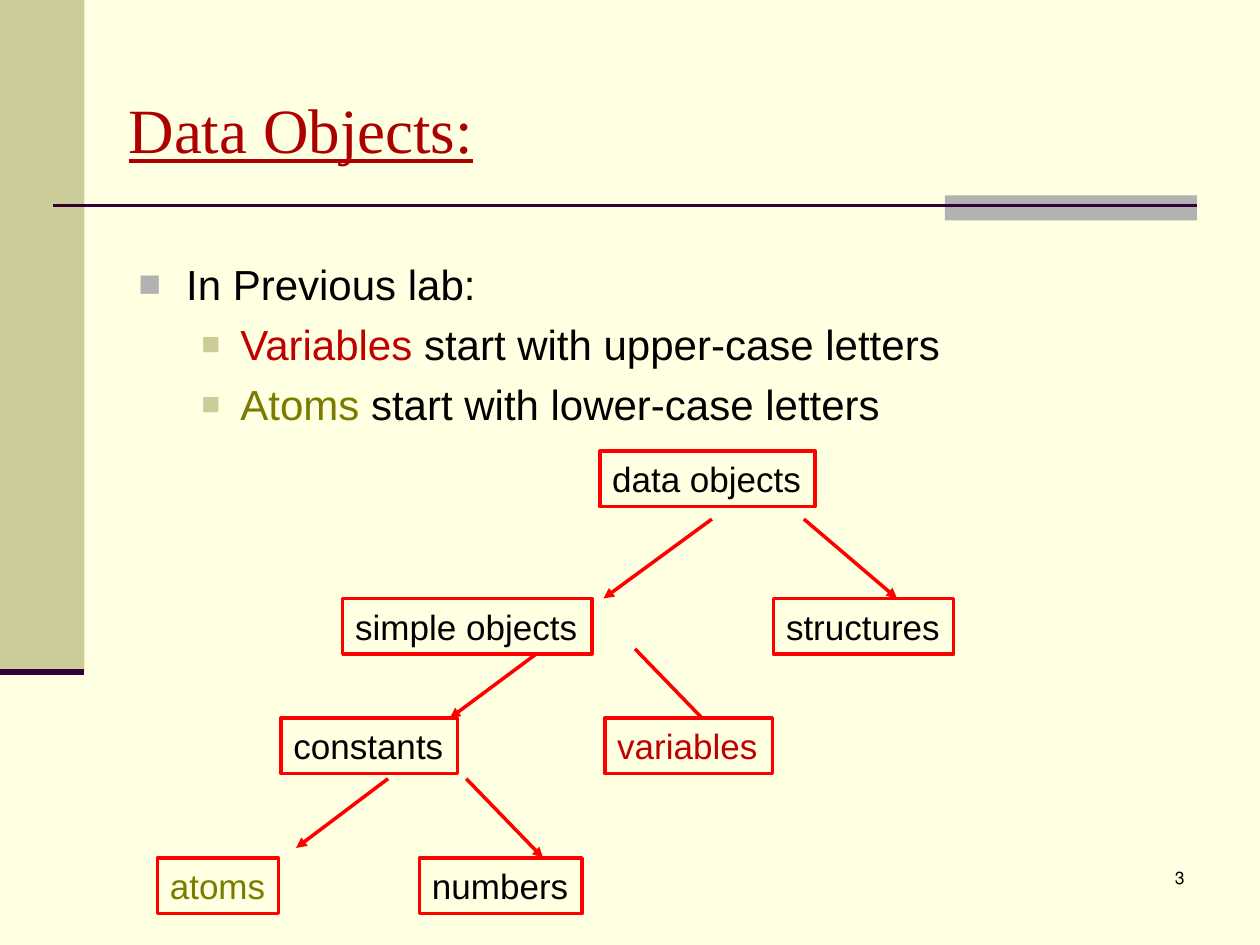
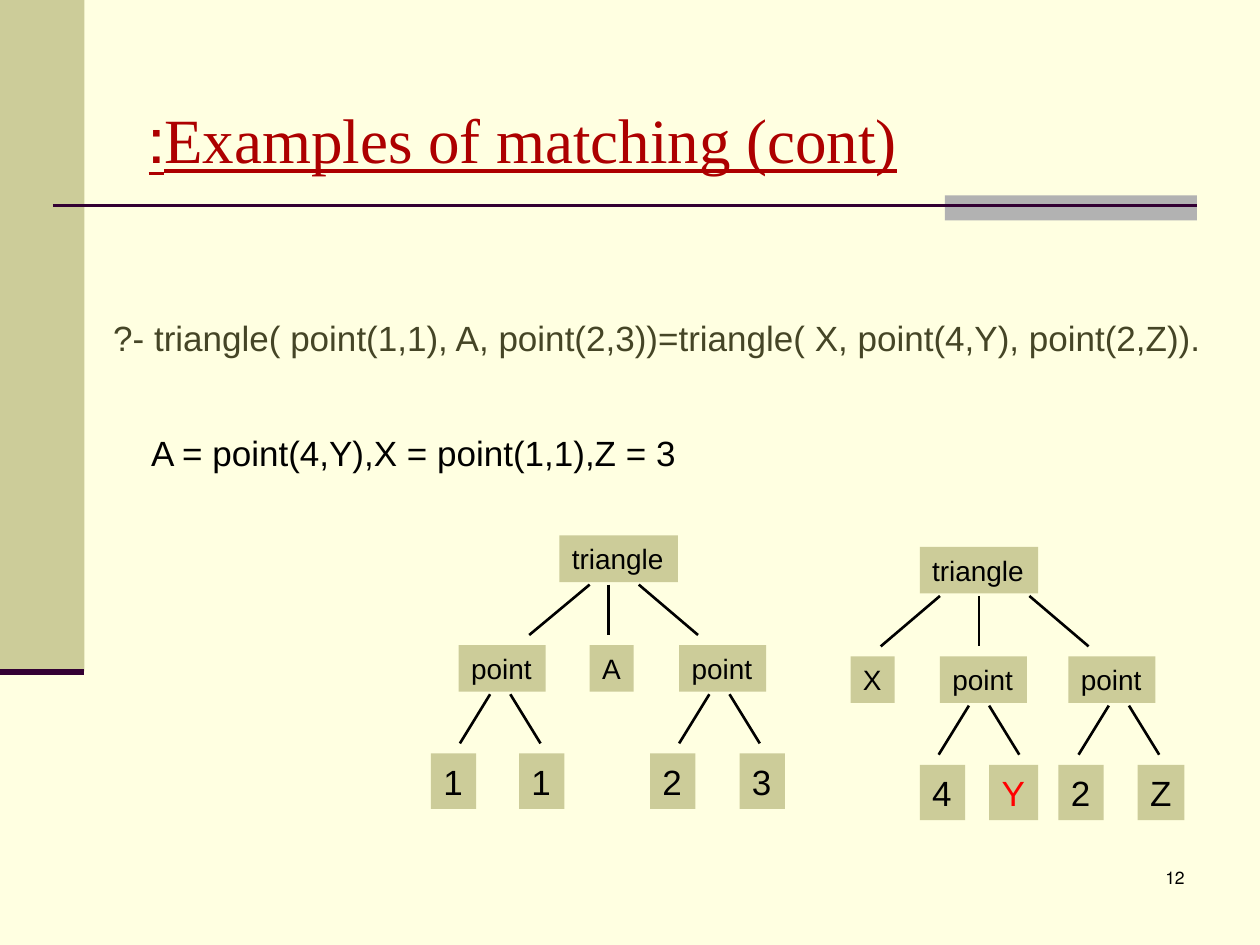
from dataclasses import dataclass

from lxml.etree import SubElement
from pptx import Presentation
from pptx.dml.color import RGBColor
from pptx.enum.shapes import MSO_CONNECTOR, MSO_SHAPE
from pptx.enum.text import MSO_ANCHOR, MSO_AUTO_SIZE, PP_ALIGN
from pptx.oxml.ns import qn
from pptx.util import Inches, Pt


@dataclass(frozen=True)
class Theme:
    paper: str = "FFFFE1"
    sand: str = "CCCC99"
    gray: str = "B2B2B2"
    plum: str = "330033"
    title: str = "AD0000"
    ink: str = "000000"
    red: str = "FF0000"
    brick: str = "C00000"
    olive: str = "7B7B00"
    query: str = "454526"
    serif: str = "Times New Roman"
    sans: str = "Arial"
    head: float = 36
    body: float = 24
    text: float = 20
    node: float = 16
    foot: float = 10


T = Theme()
rgb = RGBColor.from_string


def write(frame, text, size=T.text, color=T.ink, font=T.sans, line=None,
          align=PP_ALIGN.LEFT, rtl=False, under=None, before=0,
          left=0, hang=0, level=0, bullet=None):
    """Add a paragraph; text is a string or a list of (string, colour) runs.

    A bullet is given as (colour, percent of the text size).
    """
    para = frame.paragraphs[0]
    if para.runs:
        para = frame.add_paragraph()
    para.alignment, para.level = align, level
    para.space_before = Pt(before)
    if line:
        para.line_spacing = line
    props = para._p.get_or_add_pPr()
    props.set("marL", str(Inches(left)))
    props.set("indent", str(Inches(-hang)))
    if rtl:
        props.set("rtl", "1")
    if bullet:
        tint, scale = bullet
        SubElement(SubElement(props, qn("a:buClr")), qn("a:srgbClr"), val=tint)
        SubElement(props, qn("a:buSzPct"), val=str(scale * 1000))
        SubElement(props, qn("a:buFont"), typeface=T.sans)
        SubElement(props, qn("a:buChar"), char="■")
    for part, tint in [(text, color)] if isinstance(text, str) else text:
        run = para.add_run()
        run.text = part
        run.font.name, run.font.size = font, Pt(size)
        run.font.color.rgb = rgb(tint)
        run.font.underline = under


def link(slide, ends, color, width, arrow=False):
    """Draw a straight line through ends (x1, y1, x2, y2)."""
    wire = slide.shapes.add_connector(MSO_CONNECTOR.STRAIGHT, *map(Inches, ends))
    wire.line.color.rgb, wire.line.width = rgb(color), Pt(width)
    if arrow:
        SubElement(wire.line._get_or_add_ln(), qn("a:tailEnd"), type="triangle")
    SubElement(wire._element.spPr, qn("a:effectLst"))


# Data object tree: label, left, top, width, text colour
kinds = [
    ("data objects", 4.76, 3.58, 1.71, T.ink),
    ("simple objects", 2.72, 4.75, 1.98, T.ink),
    ("structures", 6.14, 4.75, 1.43, T.ink),
    ("constants", 2.23, 5.7, 1.4, T.ink),
    ("variables", 4.8, 5.7, 1.33, T.brick),
    ("atoms", 1.25, 6.81, 0.96, T.olive),
    ("numbers", 3.33, 6.81, 1.29, T.ink),
]
arrows = [
    (5.65, 4.12, 4.79, 4.75), (6.38, 4.12, 7.12, 4.75),
    (4.31, 5.15, 3.57, 5.7), (5.04, 5.15, 5.65, 5.78),
    (3.08, 6.18, 2.35, 6.73), (3.7, 6.18, 4.31, 6.81),
]

# Matching trees: top, root, children, leaves, root branches, leaf forks
trees = [
    (4.25, 4.44,
     [("point", 3.64), ("A", 4.68), ("point", 5.39)],
     [("1", 3.42), ("1", 4.12), ("2", 5.16), ("3", 5.87)],
     [(4.68, 4.2), (4.83, 4.83), (5.07, 5.54)], [3.97, 5.71]),
    (4.34, 7.3,
     [("X", 6.75), ("point", 7.46), ("point", 8.48)],
     [("4", 7.3), ("Y", 7.85), ("2", 8.4), ("Z", 9.03)],
     [(7.46, 6.99), (7.77, 7.77), (8.17, 8.64)], [7.77, 8.88]),
]
wide = {"triangle": 0.94, "point": 0.69, "A": 0.35, "X": 0.35, "Y": 0.39, "Z": 0.37}
terms, edges = [], []
for top, root, kids, leaves, limbs, forks in trees:
    rows = [(0, 0.37, T.node, [("triangle", root)]),
            (0.87, 0.37, T.node, kids), (1.73, 0.44, T.text, leaves)]
    for drop, high, size, row in rows:
        for label, x in row:
            tint = T.red if label == "Y" else T.ink
            terms.append((label, x, top + drop, wide.get(label, 0.36), high, size, tint))
    edges += [(a, top + 0.39, b, top + 0.79) for a, b in limbs]
    edges += [(mid + side * 0.08, top + 1.26, mid + side * 0.32, top + 1.65)
              for mid in forks for side in (-1, 1)]

sub = dict(size=T.body, before=5.5, left=0.81, hang=0.31, level=1, bullet=(T.sand, 75))
pages = [
    dict(title="Data Objects:", spot=(0.92, 0.67, 8.5, 0.78), look=dict(line=0.9),
         number="3", area=(1, 2, 9, 4.7), inset=0.05,
         body=[("In Previous lab:", dict(size=T.body, before=5.5, left=0.38, hang=0.38,
                                         bullet=(T.gray, 90))),
               ([("Variables ", T.brick), ("start with upper-case letters", T.ink)], sub),
               ([("Atoms", T.olive), (" start with lower-case letters", T.ink)], sub)],
         lines=arrows, pen=dict(color=T.red, width=2, arrow=True),
         nodes=[(label, x, y, w, 0.44, T.text, tint) for label, x, y, w, tint in kinds],
         fill=T.paper, edge=T.red),
    dict(title="Examples of matching (cont):", spot=(1.08, 0.75, 8.5, 0.7),
         look=dict(rtl=True), number="12", area=(0.42, 1.88, 9.42, 5.62), inset=0.63,
         body=[("?- triangle( point(1,1), A, point(2,3))=triangle( X, point(4,Y), point(2,Z)).",
                dict(color=T.query, left=0.38)),
               ("A = point(4,Y),X = point(1,1),Z = 3", dict(left=0.68, before=42))],
         lines=edges, pen=dict(color=T.ink, width=1.5),
         nodes=terms, fill=T.sand, edge=None),
]

deck = Presentation()
deck.slide_width, deck.slide_height = Inches(10), Inches(7.5)
back = deck.slide_master.background.fill
back.solid()
back.fore_color.rgb = rgb(T.paper)

for page in pages:
    slide = deck.slides.add_slide(deck.slide_layouts[5])
    shapes = slide.shapes

    for *spot, tint in [(0, 0, 0.67, 5.33, T.sand), (7.5, 1.55, 2, 0.2, T.gray)]:
        band = shapes.add_shape(MSO_SHAPE.RECTANGLE, *map(Inches, spot))
        band.shadow.inherit = False
        band.fill.solid()
        band.fill.fore_color.rgb = rgb(tint)
        band.line.fill.background()
    link(slide, (0.42, 1.63, 9.5, 1.63), T.plum, 1.5)
    link(slide, (0, 5.33, 0.67, 5.33), T.plum, 3.5)

    title = shapes.title
    title.left, title.top, title.width, title.height = map(Inches, page["spot"])
    title.text_frame.vertical_anchor = MSO_ANCHOR.MIDDLE
    title.text_frame.auto_size = MSO_AUTO_SIZE.NONE
    write(title.text_frame, page["title"], size=T.head, color=T.title,
          font=T.serif, under=True, **page["look"])

    foot = shapes.add_textbox(*map(Inches, (7.42, 6.83, 2.08, 0.5))).text_frame
    foot.word_wrap = True
    write(foot, page["number"], size=T.foot, align=PP_ALIGN.RIGHT, rtl=True)

    body = shapes.add_textbox(*map(Inches, page["area"])).text_frame
    body.word_wrap = True
    body.margin_top = Inches(page["inset"])
    for text, look in page["body"]:
        write(body, text, **look)

    for ends in page["lines"]:
        link(slide, ends, **page["pen"])
    for label, x, y, w, h, size, tint in page["nodes"]:
        node = shapes.add_shape(MSO_SHAPE.RECTANGLE, *map(Inches, (x, y, w, h)))
        node.shadow.inherit = False
        node.fill.solid()
        node.fill.fore_color.rgb = rgb(page["fill"])
        if page["edge"]:
            node.line.color.rgb, node.line.width = rgb(page["edge"]), Pt(2)
        else:
            node.line.fill.background()
        node.text_frame.word_wrap = False
        node.text_frame.auto_size = MSO_AUTO_SIZE.SHAPE_TO_FIT_TEXT
        write(node.text_frame, label, size=size, color=tint)

deck.save("out.pptx")
